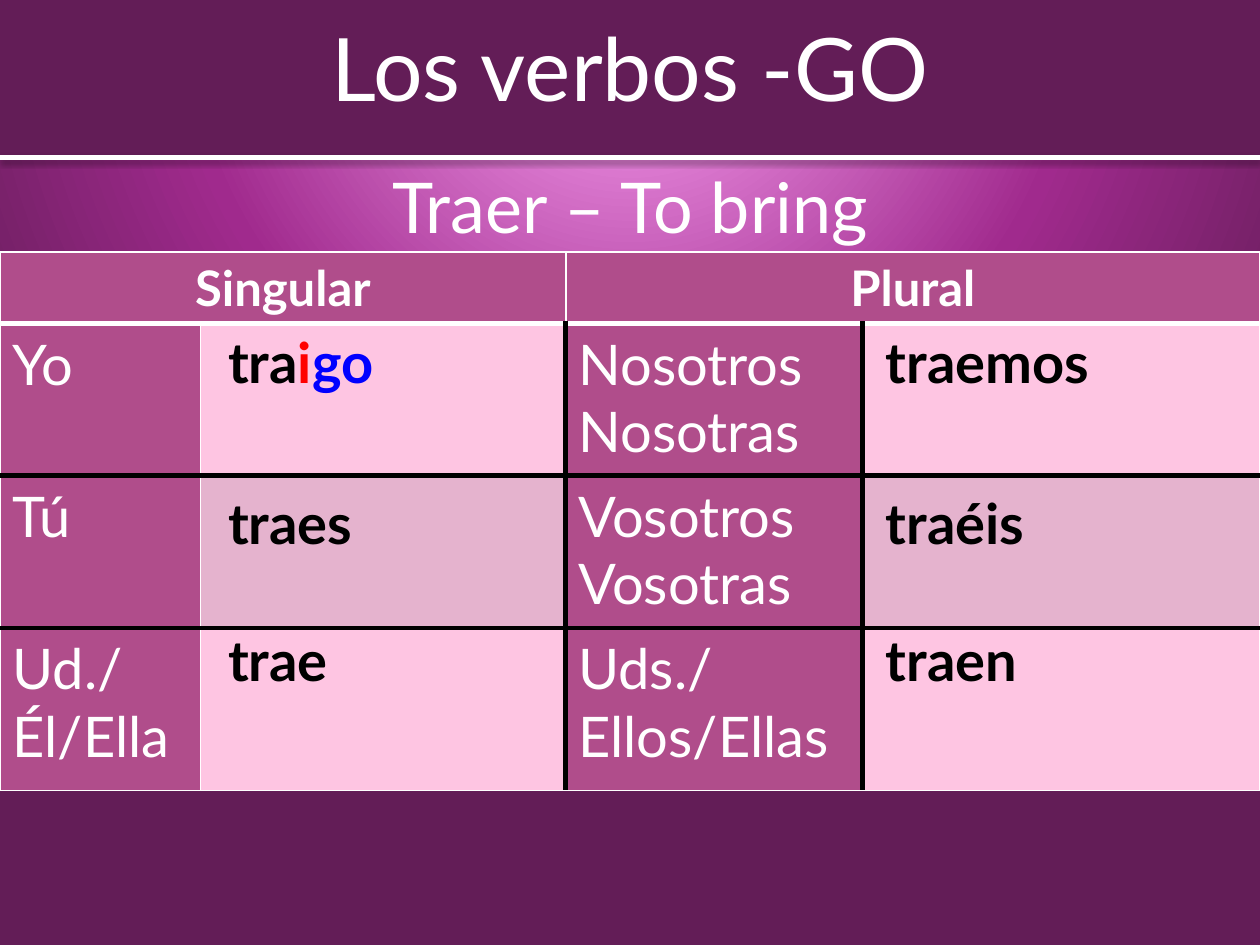
from pptx import Presentation
from pptx.dml.color import RGBColor
from pptx.enum import shapes, text
from pptx.oxml import parse_xml
from pptx.oxml.ns import qn
from pptx.util import Pt
from lxml import etree

HUE = {"dark": "631D57", "mid": "A02A8D", "glow": "FEA8F7", "head": "B04D8B",
       "pale": "FEC5E2", "dusk": "E5B3CE", "white": "FFFFFF", "black": "000000",
       "red": "FF0000", "blue": "0000FF"}
FONT = "Lato"
NS = 'xmlns:a="http://schemas.openxmlformats.org/drawingml/2006/main"'
PLAIN = "{2D5ABB26-0587-4C30-8999-92F81FD0307C}"
THIN, BOLD, RULE = ("white", 1), ("black", 3), ("white", 3)

COLS = [114.5, 208.8, 169.7, 227]
ROWS = [40, 87, 87, 93]
HEADS = ["Singular", "Plural"]
WHO = [("Yo", "Nosotros\nNosotras"),
       ("Tú", "Vosotros\nVosotras"),
       ("Ud./Él/Ella", "Uds./Ellos/Ellas")]
# Each verb form is a list of (text, colour) runs
FORMS = [([("tra", "black"), ("i", "red"), ("go", "blue")], [("traemos", "black")]),
         ([("traes", "black")], [("traéis", "black")]),
         ([("trae", "black")], [("traen", "black")])]


def rgb(name):
    return RGBColor.from_string(HUE[name])


def write(frame, parts, size, bold=False, align=text.PP_ALIGN.LEFT):
    para = frame.paragraphs[0]
    para.alignment = align
    for words, hue in parts:
        for i, line in enumerate(words.split("\n")):
            if i:
                para = frame.add_paragraph()
                para.alignment = align
            run = para.add_run()
            run.text = line
            for key, val in {"name": FONT, "size": Pt(size), "bold": bold}.items():
                setattr(run.font, key, val)
            run.font.color.rgb = rgb(hue)


def label(slide, box, words, size, anchor):
    frame = slide.shapes.add_textbox(*map(Pt, box)).text_frame
    frame.word_wrap = True
    frame.vertical_anchor = anchor
    write(frame, [(words, "white")], size, align=text.PP_ALIGN.CENTER)


def grid(slide, box, cols, rows):
    table = slide.shapes.add_table(len(rows), len(cols), *map(Pt, box)).table
    table.first_row = table.horz_banding = False
    table._tbl.tblPr.find(qn("a:tableStyleId")).text = PLAIN
    for col, wide in zip(table.columns, cols):
        col.width = Pt(wide)
    for row, high in zip(table.rows, rows):
        row.height = Pt(high)
    return table


def edge(cell, sides):
    props = cell._tc.get_or_add_tcPr()
    for i, (side, (hue, wide)) in enumerate(sides.items()):
        props.insert(i, parse_xml(
            f'<a:ln{side} {NS} w="{Pt(wide)}"><a:solidFill>'
            f'<a:srgbClr val="{HUE[hue]}"/></a:solidFill></a:ln{side}>'))


def backdrop(slide):
    slide.background.fill.gradient()
    old = slide.element.find(".//" + qn("a:gradFill"))
    stops = "".join(f'<a:gs pos="{pos}000"><a:srgbClr val="{HUE[hue]}"/></a:gs>'
                    for pos, hue in [(0, "glow"), (57, "mid"), (100, "dark")])
    old.getparent().replace(old, parse_xml(
        f'<a:gradFill {NS} rotWithShape="1"><a:gsLst>{stops}</a:gsLst>'
        '<a:path path="circle"><a:fillToRect l="50000" t="-80000" r="50000" '
        'b="180000"/></a:path></a:gradFill>'))


def banner(slide, x, y, w, h):
    band = slide.shapes.add_shape(shapes.MSO_SHAPE.RECTANGLE, *map(Pt, (x, y, w, h)))
    band.shadow.inherit = False
    band.fill.solid()
    band.fill.fore_color.rgb = rgb("dark")
    band.line.fill.background()
    # White rule with a soft shadow below it
    rule = slide.shapes.add_connector(shapes.MSO_CONNECTOR.STRAIGHT,
                                      *map(Pt, (x, y + h, x + w, y + h)))
    rule.line.color.rgb = rgb("white")
    rule.line.width = Pt(3)
    fx = etree.SubElement(rule._element.spPr, qn("a:effectLst"))
    fx.append(parse_xml(
        f'<a:outerShdw {NS} blurRad="{Pt(3.1)}" dist="{Pt(1.6)}" dir="5400000" '
        f'rotWithShape="0"><a:srgbClr val="{HUE["black"]}"><a:alpha val="38000"/>'
        '</a:srgbClr></a:outerShdw>'))
    label(slide, (x, y, w, 76.3), "Los verbos -GO", 50, text.MSO_ANCHOR.MIDDLE)


def chart(slide, x, y):
    table = grid(slide, (x, y, sum(COLS), sum(ROWS)), COLS, ROWS)
    # Heading row, each head over two columns
    for i, words in enumerate(HEADS):
        cell = table.cell(0, 2 * i)
        cell.merge(table.cell(0, 2 * i + 1))
        write(cell.text_frame, [(words, "white")], 28, True, text.PP_ALIGN.CENTER)
    for r, pair in enumerate(WHO, 1):
        for i, words in enumerate(pair):
            write(table.cell(r, 2 * i).text_frame, [(words, "white")], 32)
    # Fills and borders
    across = [THIN, RULE, BOLD, BOLD, THIN]
    down = [THIN, THIN, BOLD, BOLD, THIN]
    for r in range(len(ROWS)):
        for c in range(len(COLS)):
            cell = table.cell(r, c)
            tint = "head" if r == 0 or c % 2 == 0 else "pale" if r % 2 else "dusk"
            cell.fill.solid()
            cell.fill.fore_color.rgb = rgb(tint)
            left, right = (down[c], down[c + 1]) if r else (THIN, THIN)
            edge(cell, {"L": left, "R": right, "T": across[r], "B": across[r + 1]})


def answers(slide, x, y):
    # Verb forms lie over the pink cells
    for pair, top in zip(FORMS, (0, 92, 170.6)):
        for parts, left in zip(pair, (0, 375.8)):
            table = grid(slide, (x + left, y + top, 177, 45.6), [177], [45.6])
            write(table.cell(0, 0).text_frame, parts, 32, True)


def main():
    deck = Presentation()
    deck.slide_width, deck.slide_height = Pt(720), Pt(540)
    slide = deck.slides.add_slide(deck.slide_layouts[6])
    backdrop(slide)
    banner(slide, 0, 0, 720, 90)
    label(slide, (0, 90, 720, 374.4), "Traer – To bring", 40, text.MSO_ANCHOR.TOP)
    chart(slide, 0, 144)
    answers(slide, 123.1, 183.6)
    deck.save("out.pptx")


if __name__ == "__main__":
    main()
